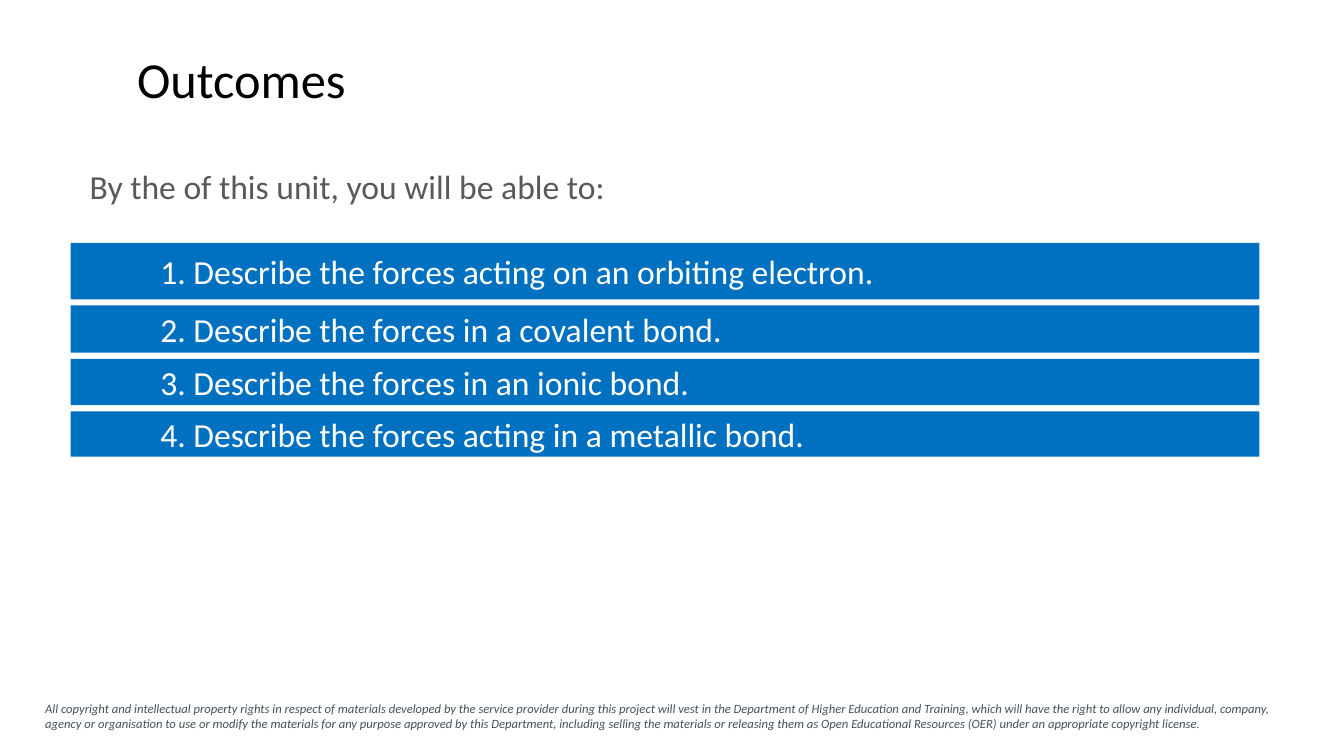
from pptx import Presentation
from pptx.dml.color import RGBColor
from pptx.enum.shapes import MSO_SHAPE
from pptx.enum.text import MSO_ANCHOR, MSO_AUTO_SIZE, PP_ALIGN
from pptx.util import Inches, Pt

BLACK = RGBColor(0x00, 0x00, 0x00)
WHITE = RGBColor(0xFF, 0xFF, 0xFF)
GREY = RGBColor(0x59, 0x59, 0x59)
SLATE = RGBColor(0x43, 0x52, 0x5A)
BLUE = RGBColor(0x00, 0x70, 0xC0)

BAR_GAP = 0.06
OUTCOMES = [
    ("1. Describe the forces acting on an orbiting electron.", 0.56),
    ("2. Describe the forces in a covalent bond.", 0.47),
    ("3. Describe the forces in an ionic bond.", 0.46),
    ("4. Describe the forces acting in a metallic bond.", 0.45),
]
COPYRIGHT = (
    "All copyright and intellectual property rights in respect of materials developed "
    "by the service provider during this project will vest in the Department of Higher "
    "Education and Training, which will have the right to allow any individual, company, "
    "agency or organisation to use or modify the materials for any purpose approved by "
    "this Department, including selling the materials or releasing them as Open "
    "Educational Resources (OER) under an appropriate copyright license."
)


def write(frame, text, size, color, italic=False):
    frame.word_wrap = True
    frame.text = text
    paragraph = frame.paragraphs[0]
    paragraph.alignment = PP_ALIGN.LEFT
    font = paragraph.runs[0].font
    font.name = "Calibri"
    font.size = Pt(size)
    font.italic = italic
    font.color.rgb = color
    return paragraph


def add_heading(slide, left, top, width, height):
    heading = slide.shapes.title
    heading.left, heading.top = Inches(left), Inches(top)
    heading.width, heading.height = Inches(width), Inches(height)
    frame = heading.text_frame
    frame.auto_size = MSO_AUTO_SIZE.NONE
    frame.vertical_anchor = MSO_ANCHOR.MIDDLE
    write(frame, "Outcomes", 36, BLACK).line_spacing = 0.9


def add_text(slide, text, size, color, left, top, width, height, italic=False):
    box = slide.shapes.add_textbox(
        Inches(left), Inches(top), Inches(width), Inches(height)
    )
    return write(box.text_frame, text, size, color, italic)


def add_introduction(slide, left, top, width, height):
    introduction = add_text(
        slide, "By the of this unit, you will be able to:", 24, GREY,
        left, top, width, height,
    )
    introduction.line_spacing = 0.9
    introduction.space_before = Pt(10)


def add_outcomes(slide, left, top, width):
    for outcome, height in OUTCOMES:
        bar = slide.shapes.add_shape(
            MSO_SHAPE.RECTANGLE,
            Inches(left), Inches(top), Inches(width), Inches(height),
        )
        bar.shadow.inherit = False
        bar.fill.solid()
        bar.fill.fore_color.rgb = BLUE
        bar.line.fill.background()
        frame = bar.text_frame
        frame.vertical_anchor = MSO_ANCHOR.MIDDLE
        frame.margin_left, frame.margin_right = Inches(0.89), Inches(0.13)
        frame.margin_top = frame.margin_bottom = Inches(0.06)
        write(frame, outcome, 24, WHITE)
        top += height + BAR_GAP


def main():
    deck = Presentation()
    deck.slide_width, deck.slide_height = Inches(13.33), Inches(7.5)
    slide = deck.slides.add_slide(deck.slide_layouts.get_by_name("Title Only"))
    add_text(slide, COPYRIGHT, 9, SLATE, 0.35, 6.9, 12.62, 0.4, italic=True)
    add_introduction(slide, 0.79, 1.64, 10.42, 5.86)
    add_outcomes(slide, 0.7, 2.41, 11.79)
    add_heading(slide, 1.26, 0.29, 8.33, 1.05)
    deck.save("out.pptx")


if __name__ == "__main__":
    main()
